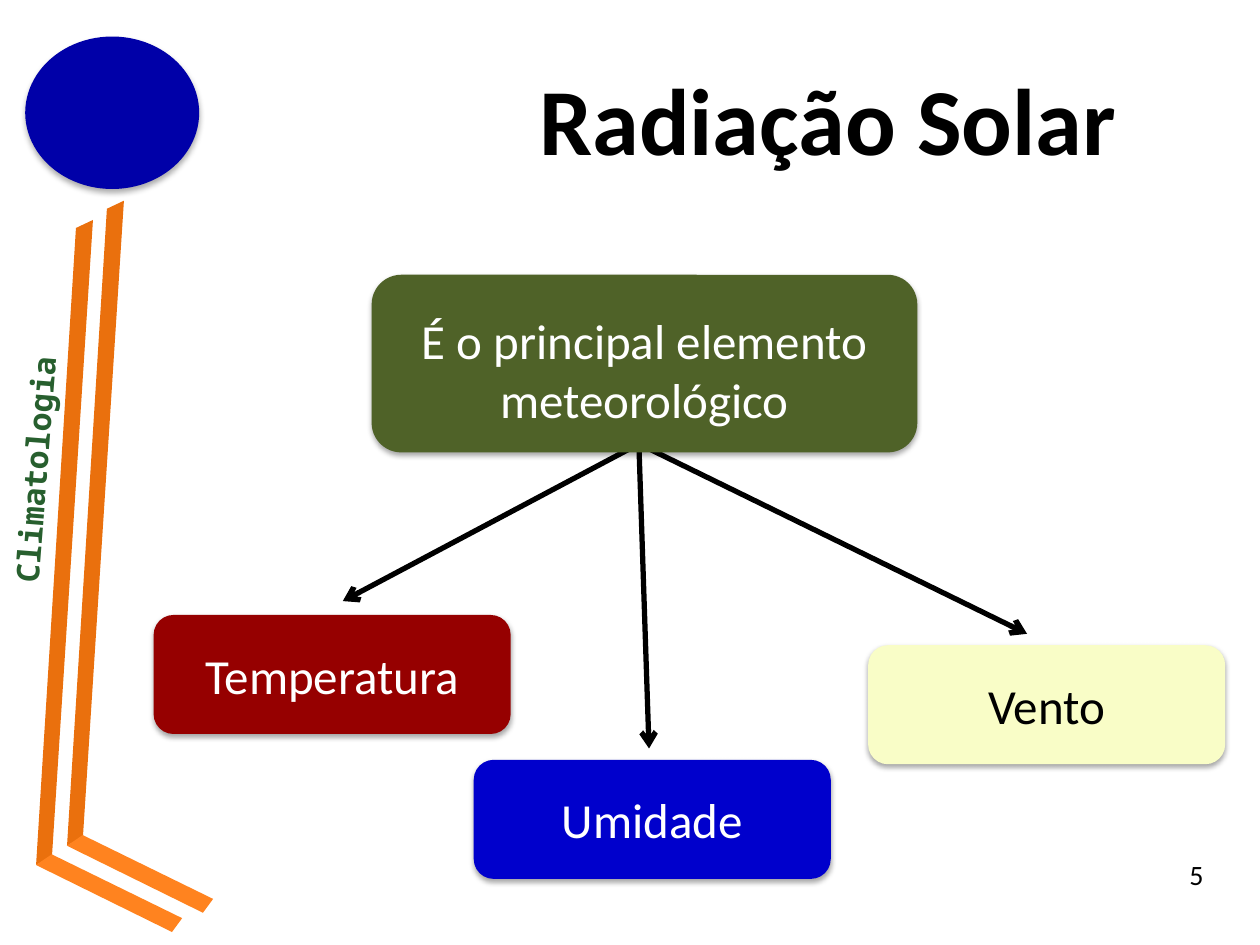
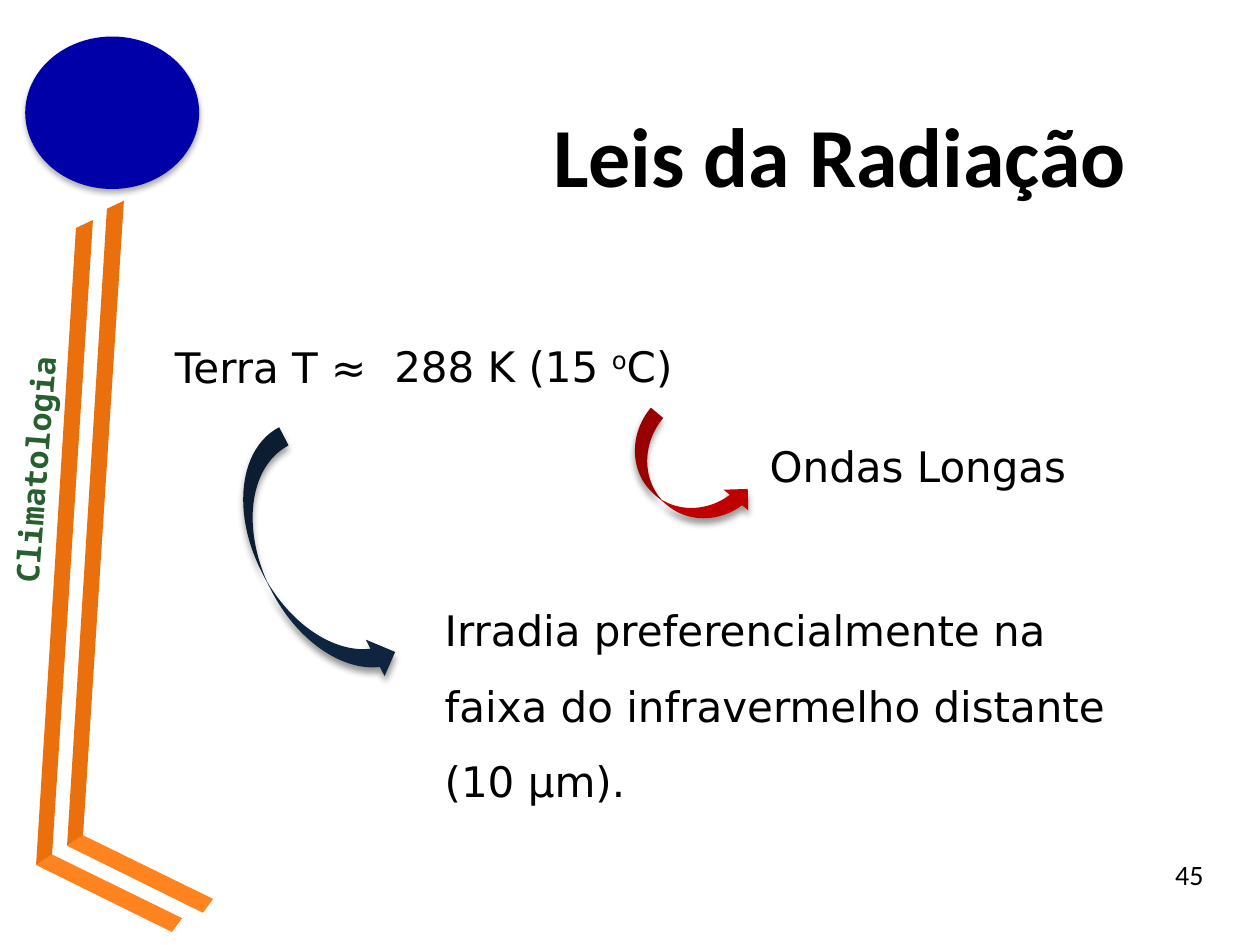
from lxml.etree import SubElement
from pptx import Presentation
from pptx.dml.color import RGBColor
from pptx.enum.shapes import MSO_CONNECTOR, MSO_SHAPE
from pptx.enum.text import MSO_ANCHOR, MSO_AUTO_SIZE, PP_ALIGN
from pptx.oxml.ns import qn
from pptx.util import Pt

COLORS = {
    "black": "000000", "white": "FFFFFF", "label": "275F2E", "emblem": "0000A8",
    "bar": "EA700D", "foot": "FF831F", "olive": "4F6228", "temperature": "960000",
    "humidity": "0000CC", "wind": "F9FDC7", "navy": "0F243E", "red": "C00000",
}
HEADING, BODY, MONO = "Calibri", "DejaVu Sans", "Noto Sans Mono"


def rgb(name):
    return RGBColor.from_string(COLORS[name])


def style(p, font, size, color="black", bold=False):
    for r in p.runs:
        r.font.name = font
        r.font.size = Pt(size)
        r.font.bold = bold
        r.font.color.rgb = rgb(color)


def paint(sp, color):
    sp.shadow.inherit = False
    sp.fill.solid()
    sp.fill.fore_color.rgb = rgb(color)
    sp.line.fill.background()


def add_shadow(sp, alpha, blur, dist):
    effects = sp._element.spPr.find(qn("a:effectLst"))
    shadow = SubElement(effects, qn("a:outerShdw"), blurRad=str(Pt(blur)),
                        dist=str(Pt(dist)), dir="5400000", rotWithShape="0")
    color = SubElement(shadow, qn("a:srgbClr"), val=COLORS["black"])
    SubElement(color, qn("a:alpha"), val=str(alpha * 1000))


def add_preset(s, kind, box, color, shadow, rotation=0):
    sp = s.shapes.add_shape(kind, *map(Pt, box))
    sp.rotation = rotation
    paint(sp, color)
    add_shadow(sp, *shadow)
    return sp


def add_text(s, box, text, font, size, color="black", bold=False):
    sp = s.shapes.add_textbox(*map(Pt, box))
    tf = sp.text_frame
    tf.word_wrap = True
    tf.text = text
    style(tf.paragraphs[0], font, size, color, bold)
    return sp


def add_body(s, box, text):
    p = add_text(s, box, text, BODY, 24).text_frame.paragraphs[0]
    p.line_spacing = 1.5
    return p


def add_title(s, box, text, size, align):
    sp = s.shapes.title
    sp.left, sp.top, sp.width, sp.height = map(Pt, box)
    tf = sp.text_frame
    tf.text = text
    tf.word_wrap = True
    tf.auto_size = MSO_AUTO_SIZE.NONE
    tf.vertical_anchor = MSO_ANCHOR.MIDDLE
    p = tf.paragraphs[0]
    p.alignment = align
    style(p, HEADING, size, bold=True)


def add_polygon(s, points, x, y, color):
    points = [(Pt(x + px), Pt(y + py)) for px, py in points]
    builder = s.shapes.build_freeform(*points[0])
    builder.add_line_segments(points[1:], close=True)
    paint(builder.convert_to_shape(), color)


def add_ribbons(s, x, y):
    bar = [(22.8, 4.6), (32.5, 0), (9.1, 363.4), (0, 368.6)]
    foot = [(0, 368.6), (9, 362.5), (83.5, 399), (77.7, 406.9)]
    for i in range(2):
        for points, color in ((bar, "bar"), (foot, "foot")):
            add_polygon(s, points, x + 17.7 * i, y - 11 * i, color)


def add_frame(s, number):
    sp = add_text(s, (527, 485.3, 167.8, 28.8), number, HEADING, 16)
    sp.text_frame.vertical_anchor = MSO_ANCHOR.MIDDLE
    sp.text_frame.paragraphs[0].alignment = PP_ALIGN.RIGHT
    sp = add_text(s, (-85, 229.7, 213.8, 28.8), "Climatologia", MONO, 18, "label", True)
    sp.text_frame.margin_left = Pt(18)
    sp.rotation = 274.5
    add_ribbons(s, 20.6, 125.7)
    add_preset(s, MSO_SHAPE.OVAL, (14.4, 20.9, 99.4, 87.1), "emblem", (32, 3.5, 2.2))


def add_card(s, box, text, fill, color="white", top=3.6):
    sp = add_preset(s, MSO_SHAPE.ROUNDED_RECTANGLE, box, fill, (35, 3.1, 1.8))
    tf = sp.text_frame
    tf.text = text
    tf.word_wrap = True
    tf.margin_top = Pt(top)
    tf.vertical_anchor = MSO_ANCHOR.MIDDLE
    p = tf.paragraphs[0]
    p.alignment = PP_ALIGN.CENTER
    style(p, HEADING, 28, color)


def add_arrow(s, start, end):
    c = s.shapes.add_connector(MSO_CONNECTOR.STRAIGHT, *map(Pt, start + end))
    c.line.color.rgb = rgb("black")
    c.line.width = Pt(3)
    SubElement(c.line._get_or_add_ln(), qn("a:tailEnd"), type="arrow")
    SubElement(c._element.spPr, qn("a:effectLst"))


def add_element_tree(s, x, y):
    branches = [
        ("Vento", (283.7, 211.7), "wind", "black", (142, 91.4), (374.5, 205.2)),
        ("Temperatura", (-124.6, 194.4), "temperature", "white", (158.5, 93.6), (-16.5, 186.5)),
        ("Umidade", (58.3, 277.2), "humidity", "white", (152.6, 94.3), (158.5, 270.7)),
    ]
    for *_, start, end in branches:
        add_arrow(s, (x + start[0], y + start[1]), (x + end[0], y + end[1]))
    for text, (dx, dy), fill, color, *_ in branches:
        add_card(s, (x + dx, y + dy, 204, 68), text, fill, color)
    add_card(s, (x, y, 311.8, 101.5), "É o principal elemento meteorológico",
             "olive", top=10)


def add_earth_radiation(s, x, y):
    add_body(s, (x, y, 602, 45.4), "Terra T ≈")
    add_body(s, (x + 154.1, y + 150.5, 416.2, 138.2),
             "Irradia preferencialmente na faixa do infravermelho distante (10 µm).")
    add_body(s, (x + 339.8, y + 56.9, 226.8, 45.4), "Ondas Longas")
    p = add_body(s, (x + 125.3, y - 0.7, 260.6, 45.4), "288 K (15 ")
    for text in ("o", "C)"):
        p.add_run().text = text
    style(p, BODY, 24)
    p.runs[1]._r.get_or_add_rPr().set("baseline", "30000")
    for box, color, rotation in (
        ((x + 58.3, y + 69.1, 46.8, 156.2), "navy", 332.7),
        ((x + 280.1, y + 55.4, 36.7, 81.4), "red", 310),
    ):
        add_preset(s, MSO_SHAPE.CURVED_RIGHT_ARROW, box, color, (40, 4, 3), rotation)


def add_slide(prs, number, title_box, title, size, align):
    s = prs.slides.add_slide(prs.slide_layouts[5])
    add_frame(s, number)
    add_title(s, title_box, title, size, align)
    return s


def main():
    prs = Presentation()
    prs.slide_width, prs.slide_height = Pt(720), Pt(540)
    s = add_slide(prs, "5", (301, 31, 391, 72), "Radiação Solar", 54, PP_ALIGN.LEFT)
    add_element_tree(s, 212.4, 157)
    s = add_slide(prs, "45", (308.9, 51.8, 386, 72), "Leis da Radiação", 48, PP_ALIGN.JUSTIFY)
    add_earth_radiation(s, 92.9, 177.1)
    prs.save("out.pptx")


if __name__ == "__main__":
    main()
